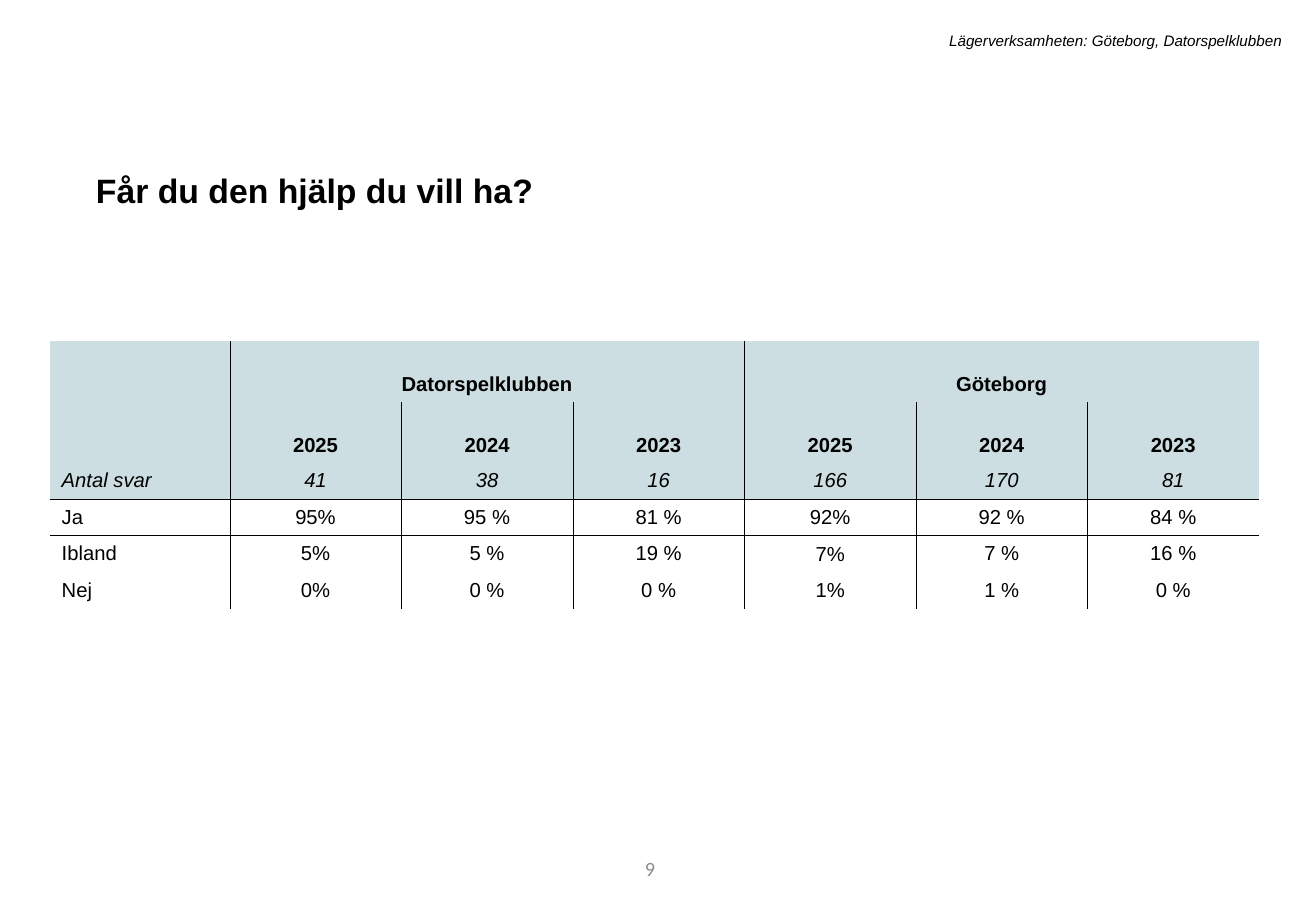
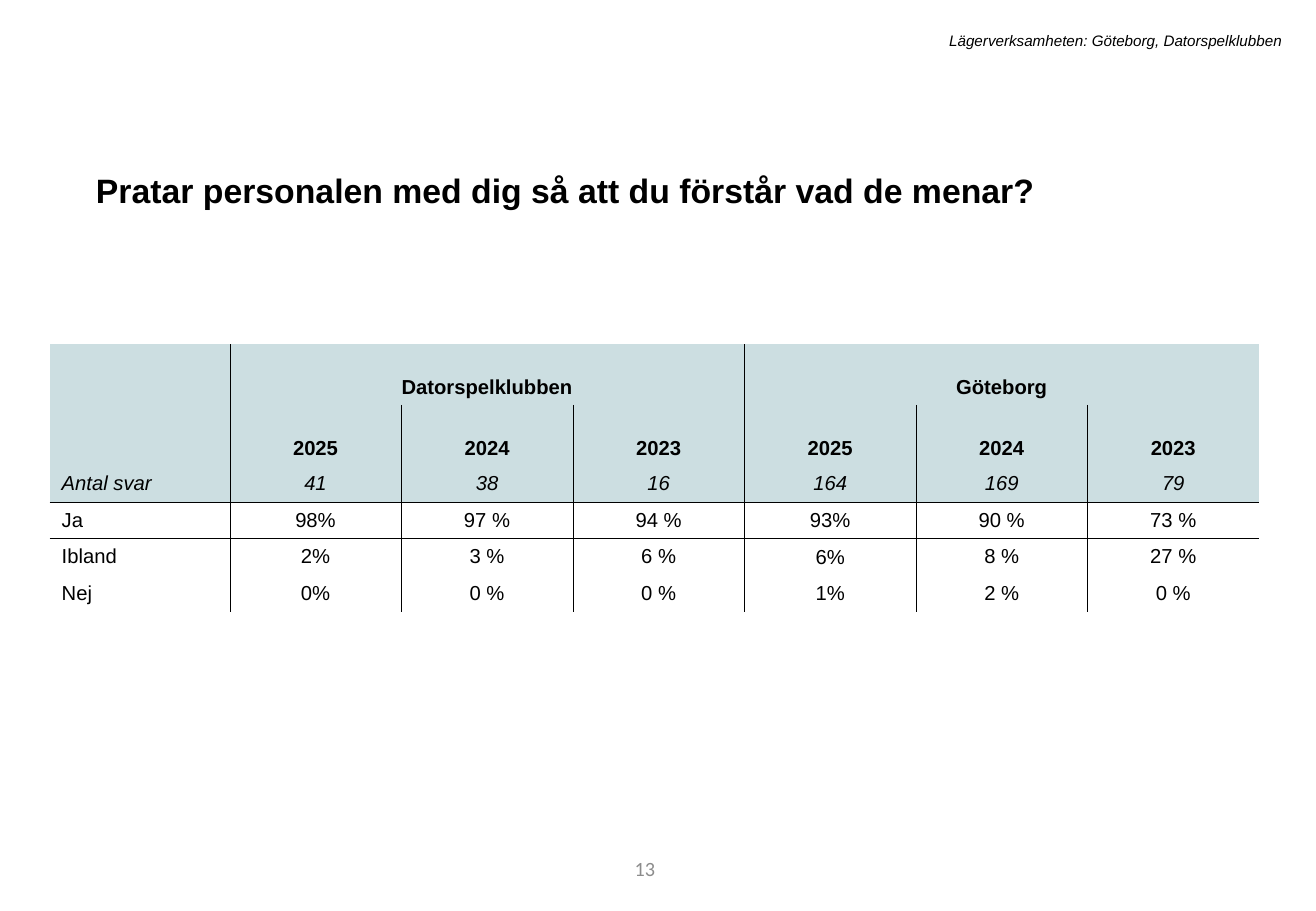
from lxml import etree
from pptx import Presentation
from pptx import util as u
from pptx.dml import color
from pptx.enum import text
from pptx.oxml import ns

PX = 3810
BLACK, GREY, HEADER_FILL = "000000", "8C8C8C", "CCDEE1"
PLAIN_TABLE = "{2D5ABB26-0587-4C30-8999-92F81FD0307C}"
BORDER_WIDTH = 3175

RUNNING_HEAD = "Lägerverksamheten: Göteborg, Datorspelklubben"
GROUPS = ["Datorspelklubben", "Göteborg"]
YEARS = ["2025", "2024", "2023"]
LABELS = ["Antal svar", "Ja", "Ibland", "Nej"]
LABEL_WIDTH, YEAR_WIDTH = 356, 339
ROW_HEIGHTS = [120, 120, 60, 67, 67, 67]
COUNT_ROW = 2
TIGHT_COLUMN = 4

QUESTIONS = [
    ("Får du den hjälp du vill ha?", "9", 674, [
        ["41", "38", "16", "166", "170", "81"],
        ["95%", "95 %", "81 %", "92%", "92 %", "84 %"],
        ["5%", "5 %", "19 %", "7%", "7 %", "16 %"],
        ["0%", "0 %", "0 %", "1%", "1 %", "0 %"]]),
    ("Pratar personalen med dig så att du förstår vad de menar?", "13", 680, [
        ["41", "38", "16", "164", "169", "79"],
        ["98%", "97 %", "94 %", "93%", "90 %", "73 %"],
        ["2%", "3 %", "6 %", "6%", "8 %", "27 %"],
        ["0%", "0 %", "0 %", "1%", "2 %", "0 %"]]),
]


def px(*lengths):
    return [u.Emu(length * PX) for length in lengths]


def rgb(value):
    return color.RGBColor.from_string(value)


def write(frame, wording, size, align, font="Arial", ink=BLACK, bold=False, italic=False):
    frame.text = wording
    paragraph = frame.paragraphs[0]
    paragraph.alignment = align
    for run in paragraph.runs:
        run.font.name = font
        run.font.size = u.Pt(size)
        run.font.bold = bold
        run.font.italic = italic
        run.font.color.rgb = rgb(ink)
    return paragraph


def add_label(slide, box, wording, size, align, anchor=text.MSO_ANCHOR.TOP, **style):
    frame = slide.shapes.add_textbox(*px(*box)).text_frame
    frame.word_wrap = True
    frame.vertical_anchor = anchor
    return write(frame, wording, size, align, **style)


def set_borders(cell, sides):
    properties = cell._tc.get_or_add_tcPr()
    for index, side in enumerate(sides):
        line = etree.Element(ns.qn("a:ln" + side), w=str(BORDER_WIDTH))
        fill = etree.SubElement(line, ns.qn("a:solidFill"))
        etree.SubElement(fill, ns.qn("a:srgbClr"), val=BLACK)
        properties.insert(index, line)


def border_sides(row, column, columns):
    starts = range(1, columns, len(YEARS) if row == 0 else 1)
    sides = ["L"] if column in starts else []
    if column + 1 in starts:
        sides.append("R")
    if row == COUNT_ROW + 1:
        sides.append("T")
    if row == COUNT_ROW:
        sides.append("B")
    return sides


def fill_cell(cell, row, column, wording):
    heading = row < COUNT_ROW
    cell.vertical_anchor = text.MSO_ANCHOR.BOTTOM if heading else text.MSO_ANCHOR.MIDDLE
    if wording:
        align = text.PP_ALIGN.CENTER if column else text.PP_ALIGN.LEFT
        write(cell.text_frame, wording, 12, align, bold=heading, italic=row == COUNT_ROW)
    if row <= COUNT_ROW:
        cell.fill.solid()
        cell.fill.fore_color.rgb = rgb(HEADER_FILL)
    else:
        cell.fill.background()
        if column == TIGHT_COLUMN:
            cell.margin_left, cell.margin_top, cell.margin_right, cell.margin_bottom = px(2, 2, 2, 0)


def add_answers(slide, top, answers):
    group_row = [""]
    for group in GROUPS:
        group_row += [group] + [""] * (len(YEARS) - 1)
    content = [group_row, [""] + YEARS * len(GROUPS)]
    content += [[label] + values for label, values in zip(LABELS, answers)]
    columns = len(group_row)
    widths = [LABEL_WIDTH] + [YEAR_WIDTH] * (columns - 1)
    frame = slide.shapes.add_table(len(content), columns, *px(98, top, sum(widths), sum(ROW_HEIGHTS)))
    table = frame.table
    table.first_row = table.horz_banding = False
    table._tbl.tblPr.find(ns.qn("a:tableStyleId")).text = PLAIN_TABLE
    for column, width in zip(table.columns, px(*widths)):
        column.width = width
    for row, height in zip(table.rows, px(*ROW_HEIGHTS)):
        row.height = height
    for first in range(1, columns, len(YEARS)):
        table.cell(0, first).merge(table.cell(0, first + len(YEARS) - 1))
    for row, wordings in enumerate(content):
        for column, wording in enumerate(wordings):
            cell = table.cell(row, column)
            fill_cell(cell, row, column, wording)
            set_borders(cell, border_sides(row, column, columns))


def add_question(deck, question, number, top, answers):
    slide = deck.slides.add_slide(deck.slide_layouts[6])
    right = text.PP_ALIGN.RIGHT
    add_label(slide, (732, 1668, 586, 96), number, 12, right,
              text.MSO_ANCHOR.MIDDLE, font="Calibri", ink=GREY)
    title = add_label(slide, (166, 307, 2256, 113), question, 20, text.PP_ALIGN.LEFT, bold=True)
    title.line_spacing = 1.2
    title.space_before = u.Pt(10)
    add_answers(slide, top, answers)
    add_label(slide, (430, 50, 2126, 60), RUNNING_HEAD, 9, right, italic=True)


def main():
    deck = Presentation()
    deck.slide_width, deck.slide_height = px(2600, 1800)
    for question in QUESTIONS:
        add_question(deck, *question)
    deck.save("out.pptx")


if __name__ == "__main__":
    main()
